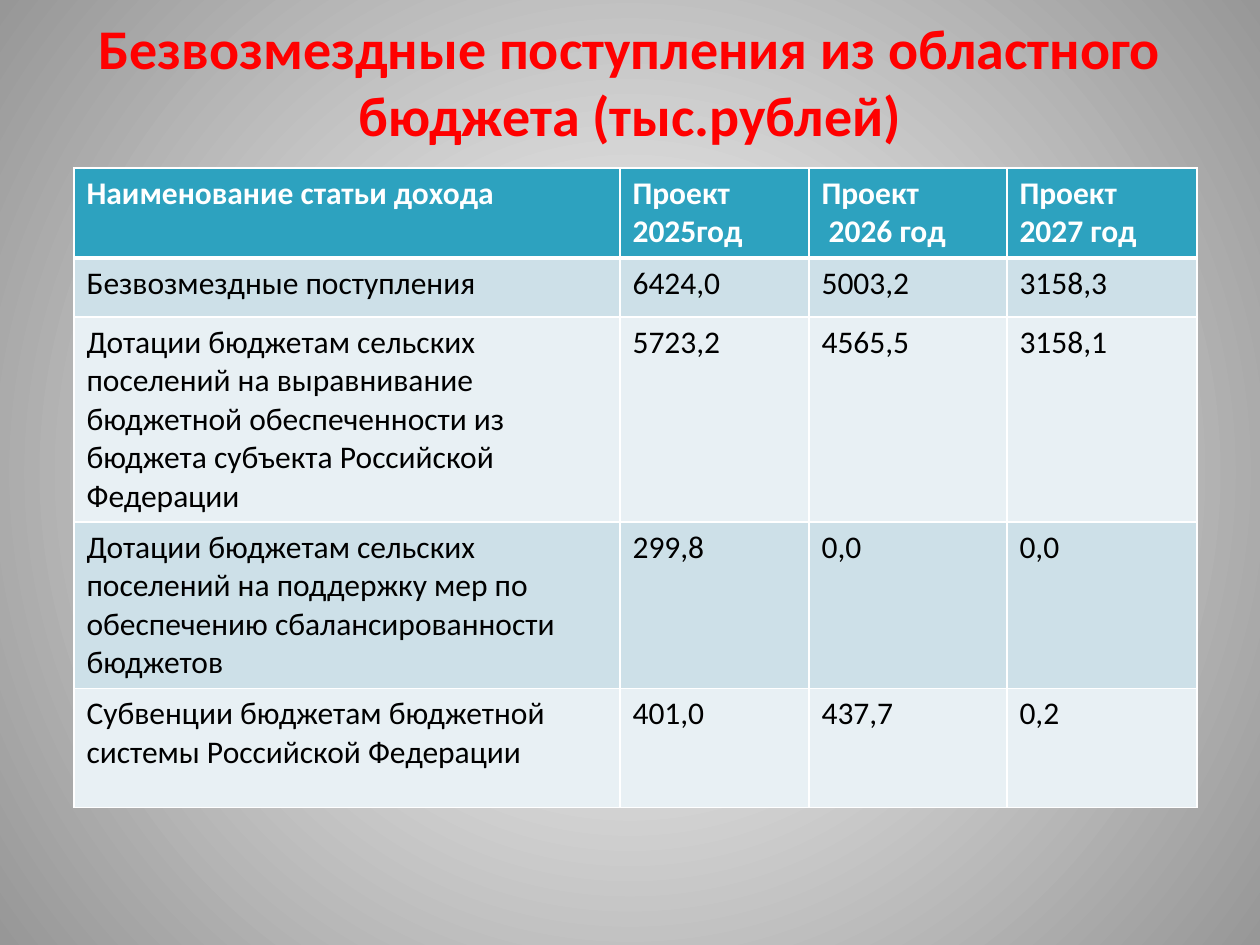
"""Build a slide with a table of transfers from the regional budget."""
from lxml import etree
from pptx import Presentation
from pptx.dml.color import RGBColor
from pptx.enum.text import MSO_ANCHOR, MSO_AUTO_SIZE, PP_ALIGN
from pptx.oxml import parse_xml
from pptx.oxml.ns import nsdecls, qn
from pptx.util import Pt

MIDDLE, CENTER, NO_FIT = MSO_ANCHOR.MIDDLE, PP_ALIGN.CENTER, MSO_AUTO_SIZE.NONE

TITLE = "Безвозмездные поступления из областного бюджета (тыс.рублей)"
ROWS = [
    ("Наименование статьи дохода", "Проект 2025год", "Проект\n 2026 год", "Проект 2027 год"),
    ("Безвозмездные поступления", "6424,0", "5003,2", "3158,3"),
    ("Дотации бюджетам сельских поселений на выравнивание бюджетной обеспеченности "
     "из бюджета субъекта Российской Федерации", "5723,2", "4565,5", "3158,1"),
    ("Дотации бюджетам сельских поселений на поддержку мер по обеспечению "
     "сбалансированности бюджетов", "299,8", "0,0", "0,0"),
    ("Субвенции бюджетам бюджетной системы Российской Федерации", "401,0", "437,7", "0,2"),
]
COL_WIDTHS = (546, 189, 198, 190)
ROW_HEIGHTS = (90, 59, 205, 166, 119)
TITLE_BOX = (63, 16, 1134, 129)
TABLE_AT = (74, 168)

THEME = {
    "font": "Calibri", "title_size": 32, "cell_size": 18,
    "title": "FF0000", "head_text": "FFFFFF", "text": "000000",
    "head": "2DA2BF", "bands": ("CDE0E8", "E8F0F4"), "border": "FFFFFF",
    "back": ("FFFFFF", "979797"),
}


def px(n):
    return round(n * 914400 / 126)


def add_run(p, text, size, color, bold):
    r = p.add_run()
    r.text = text
    r.font.name, r.font.size, r.font.bold = THEME["font"], Pt(size), bold
    r.font.color.rgb = RGBColor.from_string(color)
    return r


def set_background(s):
    fill = s.background.fill
    fill.gradient()
    for stop, pos, color in zip(fill.gradient_stops, (0, 1), THEME["back"]):
        stop.position = pos
        stop.color.rgb = RGBColor.from_string(color)
    lin = s.background._cSld.find(".//" + qn("a:lin"))
    lin.getparent().replace(lin, parse_xml(
        f'<a:path {nsdecls("a")} path="circle">'
        '<a:fillToRect l="50000" t="50000" r="50000" b="50000"/></a:path>'))


def add_title(s):
    sp = s.shapes.title
    sp.left, sp.top, sp.width, sp.height = map(px, TITLE_BOX)
    tf = sp.text_frame
    tf.word_wrap, tf.auto_size, tf.vertical_anchor = True, NO_FIT, MIDDLE
    p = tf.paragraphs[0]
    p.alignment = CENTER
    r = add_run(p, TITLE, THEME["title_size"], THEME["title"], True)
    r.font._element.find(qn("a:solidFill")).addnext(parse_xml(
        f'<a:effectLst {nsdecls("a")}><a:outerShdw blurRad="60000" dist="50000" dir="7500000">'
        '<a:srgbClr val="000000"/></a:outerShdw></a:effectLst>'))


def set_borders(cell, widths):
    tc_pr = cell._tc.get_or_add_tcPr()
    for i, (side, width) in enumerate(zip("LRTB", widths)):
        ln = etree.Element(qn(f"a:ln{side}"), w=str(Pt(width)))
        fill = etree.SubElement(ln, qn("a:solidFill"))
        etree.SubElement(fill, qn("a:srgbClr"), val=THEME["border"])
        tc_pr.insert(i, ln)


def fill_cell(cell, text, row):
    head = row == 0
    color = THEME["head"] if head else THEME["bands"][(row - 1) % 2]
    cell.fill.solid()
    cell.fill.fore_color.rgb = RGBColor.from_string(color)
    set_borders(cell, (1, 1, 3 if row == 1 else 1, 3 if head else 1))
    tf = cell.text_frame
    for i, line in enumerate(text.split("\n")):
        p = tf.add_paragraph() if i else tf.paragraphs[0]
        add_run(p, line, THEME["cell_size"], THEME["head_text" if head else "text"], head)


def add_budget_table(s):
    box = (*TABLE_AT, sum(COL_WIDTHS), sum(ROW_HEIGHTS))
    table = s.shapes.add_table(len(ROWS), len(COL_WIDTHS), *map(px, box)).table
    for col, width in zip(table.columns, COL_WIDTHS):
        col.width = px(width)
    for i, (row, height) in enumerate(zip(table.rows, ROW_HEIGHTS)):
        row.height = px(height)
        for cell, text in zip(row.cells, ROWS[i]):
            fill_cell(cell, text, i)


def main():
    prs = Presentation()
    prs.slide_width, prs.slide_height = px(1260), px(945)
    s = prs.slides.add_slide(prs.slide_layouts[5])
    set_background(s)
    add_title(s)
    add_budget_table(s)
    prs.save("out.pptx")


if __name__ == "__main__":
    main()
